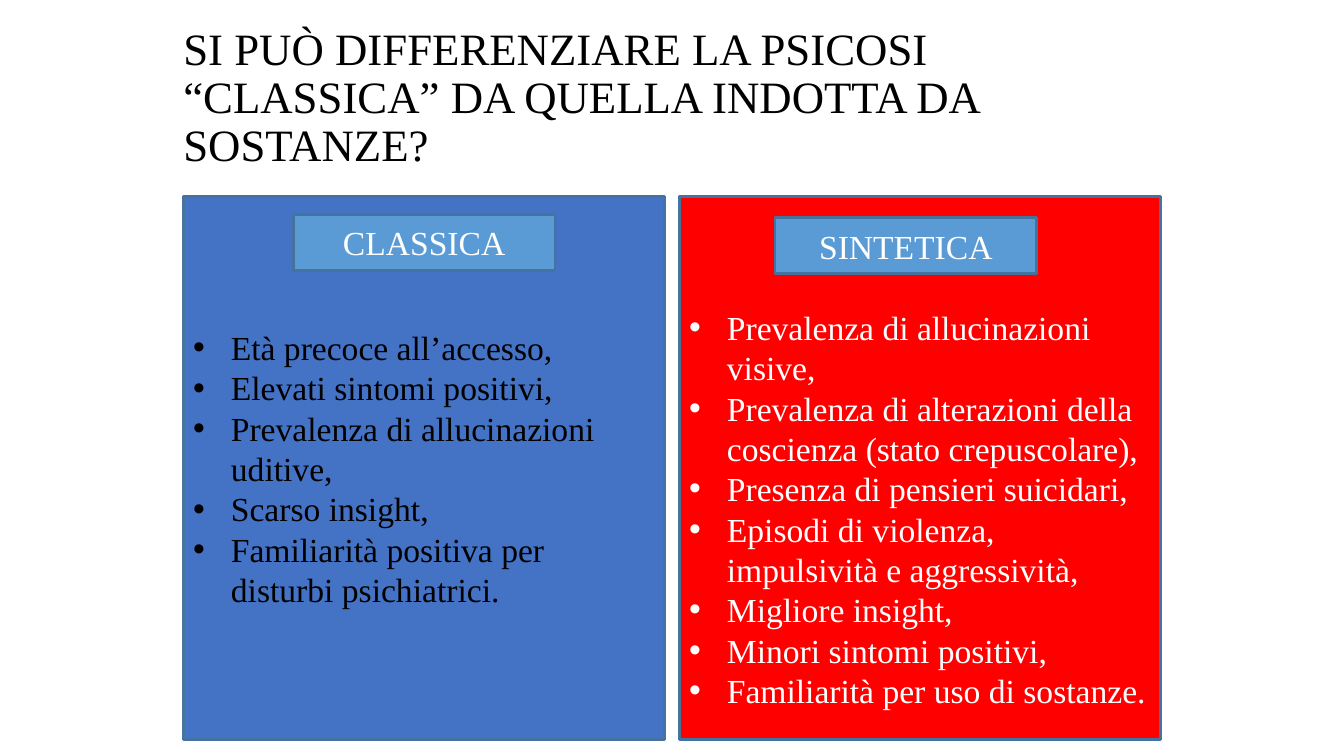
from dataclasses import dataclass

from lxml import etree
from pptx import Presentation
from pptx import util as u
from pptx.dml.color import RGBColor
from pptx.enum import shapes, text
from pptx.oxml import ns


@dataclass(frozen=True)
class Theme:
    """Colours, font and type sizes of the slide."""
    font: str = "Times New Roman"
    title_size: int = 32
    body_size: int = 24
    black: str = "000000"
    white: str = "FFFFFF"
    blue: str = "4472C4"
    red: str = "FF0000"
    label: str = "5B9BD5"
    outline: str = "43739E"


@dataclass(frozen=True)
class Box:
    """Position and size in centimetres."""
    left: float
    top: float
    width: float
    height: float

    def lengths(self) -> tuple:
        """Return the four values as lengths."""
        return tuple(u.Cm(value) for value in (self.left, self.top, self.width, self.height))


@dataclass(frozen=True)
class Panel:
    """One column of the comparison with its label."""
    box: Box
    fill: str
    ink: str
    top_inset: float
    items: tuple[str, ...]
    label: str
    label_box: Box


THEME = Theme()
LEFT, TOP, WIDTH, HEIGHT = 4.62, 4.95, 12.12, 13.69
PITCH = 12.5
INDENT = 0.95
TITLE = "SI PUÒ DIFFERENZIARE LA PSICOSI “CLASSICA” DA QUELLA INDOTTA DA SOSTANZE?"
PANELS = (
    Panel(
        Box(LEFT, TOP, WIDTH, HEIGHT), THEME.blue, THEME.black, 0.13,
        (
            "Età precoce all’accesso,",
            "Elevati sintomi positivi,",
            "Prevalenza di allucinazioni uditive,",
            "Scarso insight,",
            "Familiarità positiva per disturbi psichiatrici.",
        ),
        "CLASSICA", Box(7.39, 5.41, 6.6, 1.4),
    ),
    Panel(
        Box(LEFT + PITCH, TOP, WIDTH, HEIGHT), THEME.red, THEME.white, 2.16,
        (
            "Prevalenza di allucinazioni visive,",
            "Prevalenza di alterazioni della coscienza (stato crepuscolare),",
            "Presenza di pensieri suicidari,",
            "Episodi di violenza, impulsività e aggressività,",
            "Migliore insight,",
            "Minori sintomi positivi,",
            "Familiarità per uso di sostanze.",
        ),
        "SINTETICA", Box(19.53, 5.49, 6.6, 1.4),
    ),
)


def add_run(paragraph, wording: str, size: int, color: str) -> None:
    """Add one formatted run to a paragraph."""
    run = paragraph.add_run()
    run.text = wording
    run.font.name = THEME.font
    run.font.size = u.Pt(size)
    run.font.color.rgb = RGBColor.from_string(color)


def add_bullet(paragraph) -> None:
    """Give a paragraph a hanging bullet."""
    properties = paragraph._p.get_or_add_pPr()
    properties.set("marL", str(u.Cm(INDENT)))
    properties.set("indent", str(-u.Cm(INDENT)))
    etree.SubElement(properties, ns.qn("a:buFont"), typeface="Arial")
    etree.SubElement(properties, ns.qn("a:buChar"), char="•")


def add_rectangle(slide, box: Box, fill: str):
    """Add an outlined rectangle and return its text frame."""
    shape = slide.shapes.add_shape(shapes.MSO_SHAPE.RECTANGLE, *box.lengths())
    shape.shadow.inherit = False
    shape.fill.solid()
    shape.fill.fore_color.rgb = RGBColor.from_string(fill)
    shape.line.color.rgb = RGBColor.from_string(THEME.outline)
    shape.line.width = u.Pt(2)
    frame = shape.text_frame
    frame.word_wrap = True
    frame.vertical_anchor = text.MSO_ANCHOR.MIDDLE
    return frame


def add_title(slide) -> None:
    """Add the slide heading."""
    frame = slide.shapes.add_textbox(*Box(LEFT, 0.41, 24.61, 4.17).lengths()).text_frame
    frame.word_wrap = True
    frame.vertical_anchor = text.MSO_ANCHOR.MIDDLE
    frame.margin_left = frame.margin_right = frame.margin_top = frame.margin_bottom = 0
    paragraph = frame.paragraphs[0]
    paragraph.line_spacing = 0.9
    add_run(paragraph, TITLE, THEME.title_size, THEME.black)


def add_panel(slide, panel: Panel) -> None:
    """Add a bulleted panel and its label."""
    frame = add_rectangle(slide, panel.box, panel.fill)
    frame.margin_top = u.Cm(panel.top_inset)
    for index, item in enumerate(panel.items):
        paragraph = frame.add_paragraph() if index else frame.paragraphs[0]
        paragraph.alignment = text.PP_ALIGN.LEFT
        add_bullet(paragraph)
        add_run(paragraph, item, THEME.body_size, panel.ink)
    paragraph = add_rectangle(slide, panel.label_box, THEME.label).paragraphs[0]
    paragraph.alignment = text.PP_ALIGN.CENTER
    add_run(paragraph, panel.label, THEME.body_size, THEME.white)


def main() -> None:
    """Build and save the slide."""
    presentation = Presentation()
    presentation.slide_width = u.Cm(33.87)
    presentation.slide_height = u.Cm(19.05)
    slide = presentation.slides.add_slide(presentation.slide_layouts[6])
    add_title(slide)
    for panel in PANELS:
        add_panel(slide, panel)
    presentation.save("out.pptx")


if __name__ == "__main__":
    main()
